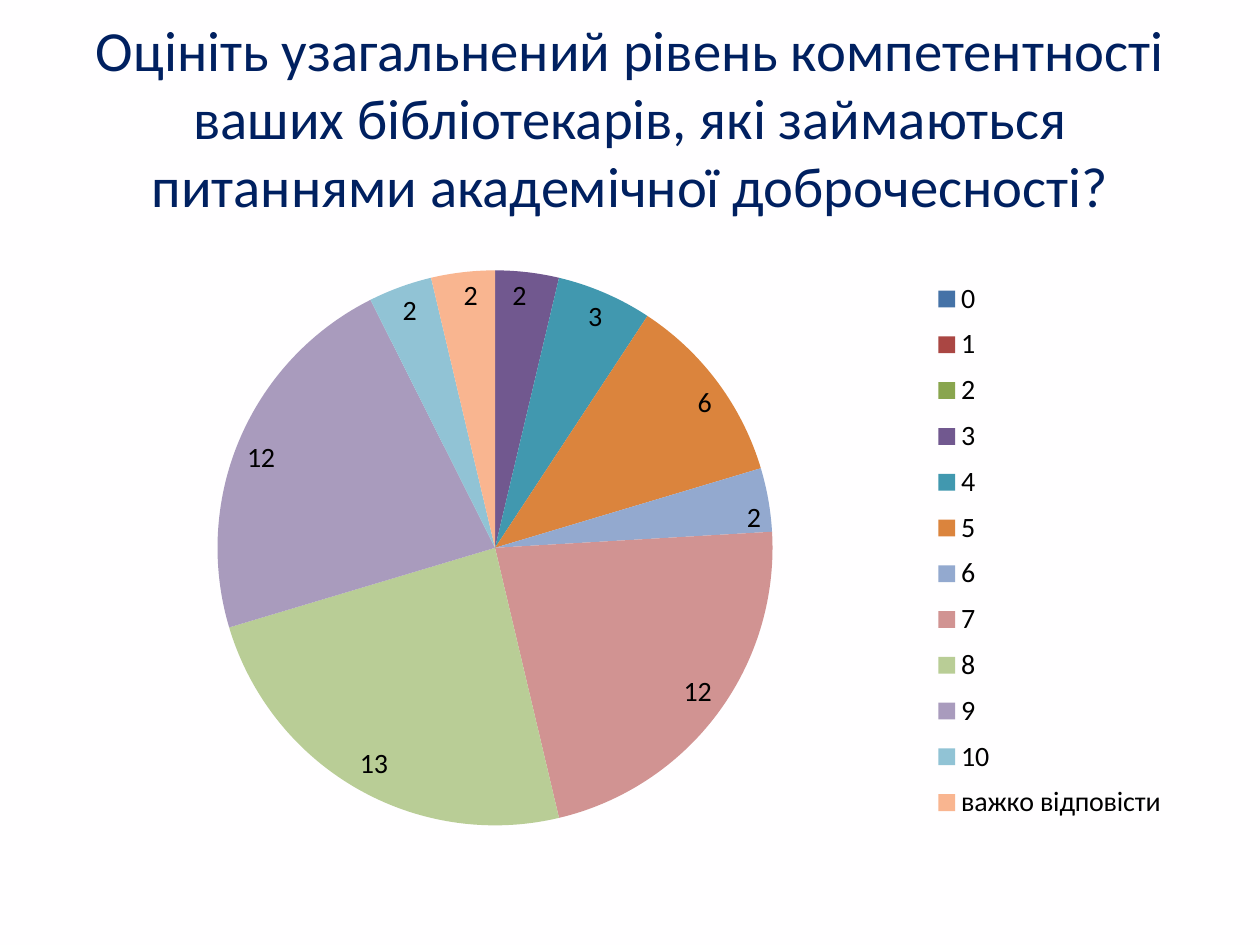
import pptx
import pptx.chart.data
import pptx.dml.color
import pptx.enum.chart
import pptx.enum.text
import pptx.oxml
import pptx.oxml.ns
import pptx.util
from pptx.util import Inches

FONT = "Calibri"
TITLE = ("Оцініть узагальнений рівень компетентності ваших бібліотекарів, "
         "які займаються питаннями академічної доброчесності?")
RATINGS = [
    ("0", None, "4572A7"),
    ("1", None, "AA4643"),
    ("2", None, "89A54E"),
    ("3", 2, "71588F"),
    ("4", 3, "4198AF"),
    ("5", 6, "DB843D"),
    ("6", 2, "93A9CF"),
    ("7", 12, "D19392"),
    ("8", 13, "B9CD96"),
    ("9", 12, "A99BBD"),
    ("10", 2, "91C3D5"),
    ("важко відповісти", 2, "F9B590"),
]


def set_fill(fill, color):
    fill.solid()
    fill.fore_color.rgb = pptx.dml.color.RGBColor.from_string(color)


def set_font(font, size, color):
    font.name = FONT
    font.size = pptx.util.Pt(size)
    set_fill(font.fill, color)


def write_text(frame, text, *, size, color, align):
    paragraph = frame.paragraphs[0]
    paragraph.alignment = align
    run = paragraph.add_run()
    run.text = text
    set_font(run.font, size, color)


def make_layout(left, top, width, height, inner=False):
    target = '<c:layoutTarget val="inner"/>' if inner else ""
    sizes = "".join(f'<c:{name} val="{value}"/>' for name, value in
                    zip("xywh", (left, top, width, height)))
    return pptx.oxml.parse_xml(
        f'<c:layout {pptx.oxml.ns.nsdecls("c")}><c:manualLayout>{target}'
        f'<c:xMode val="edge"/><c:yMode val="edge"/>{sizes}'
        '</c:manualLayout></c:layout>')


class SlideBuilder:
    """Holds the slide and its text style and adds each kind of element."""

    def __init__(self, slide, background, title_color, text_color):
        self.slide = slide
        self.title_color = title_color
        self.text_color = text_color
        set_fill(slide.background.fill, background)

    def add_title(self, text, left, top, width, height):
        frame = self.slide.shapes.add_textbox(left, top, width, height).text_frame
        frame.word_wrap = True
        frame.vertical_anchor = pptx.enum.text.MSO_ANCHOR.MIDDLE
        write_text(frame, text, size=32.4, color=self.title_color,
                   align=pptx.enum.text.PP_ALIGN.CENTER)

    def add_pie(self, ratings, left, top, width, height):
        categories, values, colors = zip(*ratings)
        data = pptx.chart.data.CategoryChartData()
        data.categories = categories
        data.add_series("Series 1", values)
        chart = self.slide.shapes.add_chart(
            pptx.enum.chart.XL_CHART_TYPE.PIE, left, top, width, height, data).chart
        chart.has_title = False
        set_font(chart.font, 10, self.text_color)
        plot = chart.plots[0]
        plot.vary_by_categories = True
        for index, color in enumerate(colors):
            set_fill(plot.series[0].points[index].format.fill, color)
        self.style_labels(plot)
        self.style_legend(chart)
        plot_area = chart._chartSpace.chart.plotArea
        for layout in plot_area.findall(pptx.oxml.ns.qn("c:layout")):
            plot_area.remove(layout)
        plot_area.insert(0, make_layout(0.136, 0.08, 0.49, 0.89, inner=True))

    def style_labels(self, plot):
        plot.has_data_labels = True
        labels = plot.data_labels
        labels.show_value = True
        labels.position = pptx.enum.chart.XL_LABEL_POSITION.INSIDE_END
        set_font(labels.font, 16, self.text_color)

    def style_legend(self, chart):
        chart.has_legend = True
        legend = chart.legend
        legend.position = pptx.enum.chart.XL_LEGEND_POSITION.RIGHT
        legend.include_in_layout = False
        set_font(legend.font, 16, self.text_color)
        element = legend._element
        for layout in element.findall(pptx.oxml.ns.qn("c:layout")):
            element.remove(layout)
        position = element.find(pptx.oxml.ns.qn("c:legendPos"))
        position.addnext(make_layout(0.76, 0.08, 0.22, 0.9))


def main():
    presentation = pptx.Presentation()
    presentation.slide_width = Inches(10)
    presentation.slide_height = Inches(7.5)
    slide = presentation.slides.add_slide(presentation.slide_layouts[6])
    builder = SlideBuilder(slide, "FFFEFF", "002060", "000000")
    builder.add_title(TITLE, Inches(0.5), Inches(0.3), Inches(9), Inches(1.25))
    builder.add_pie(RATINGS, Inches(0.5), Inches(1.75), Inches(9), Inches(4.95))
    presentation.save("out.pptx")


if __name__ == "__main__":
    main()
